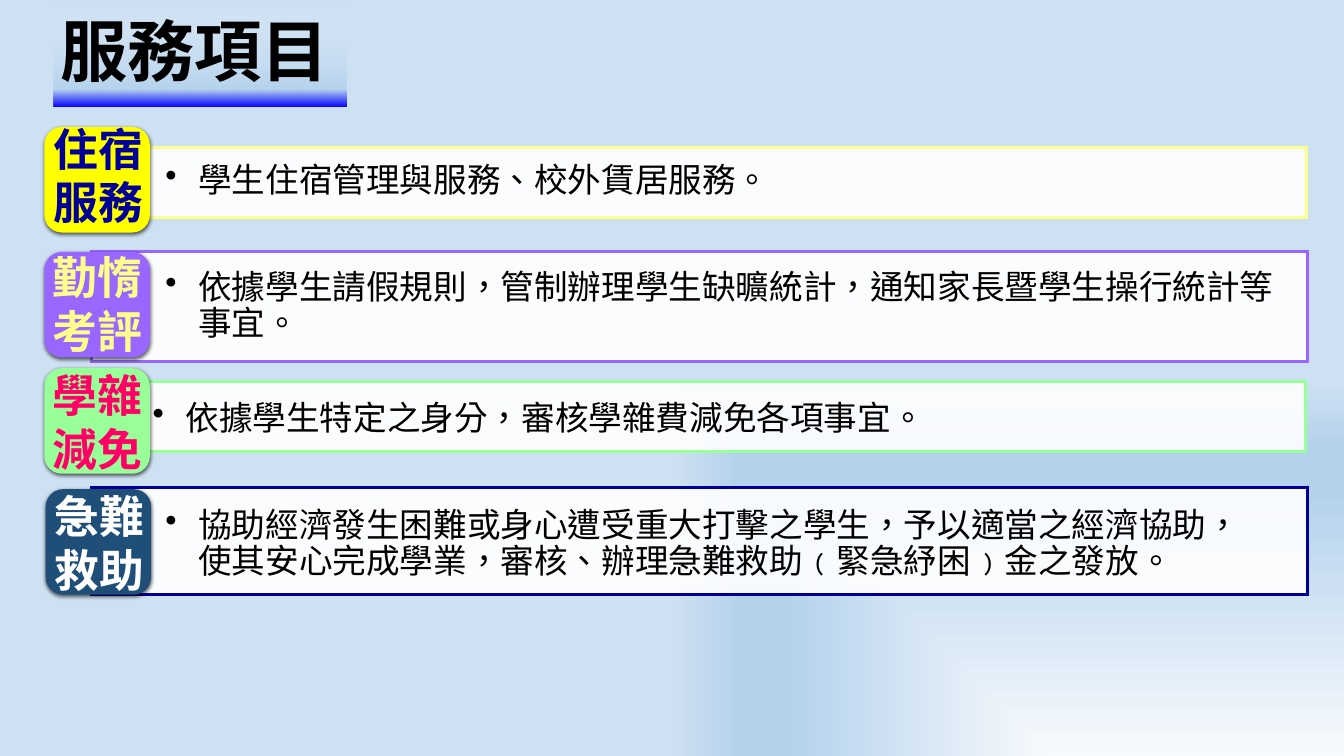
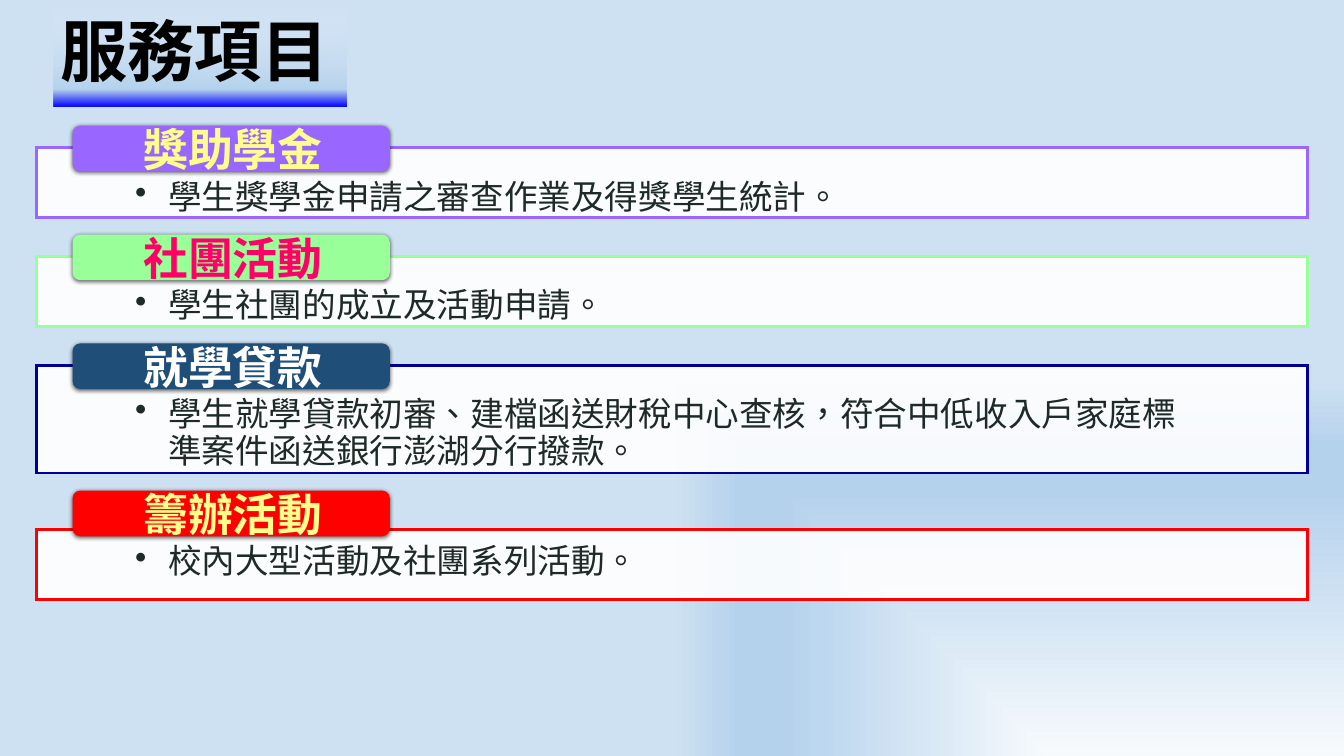
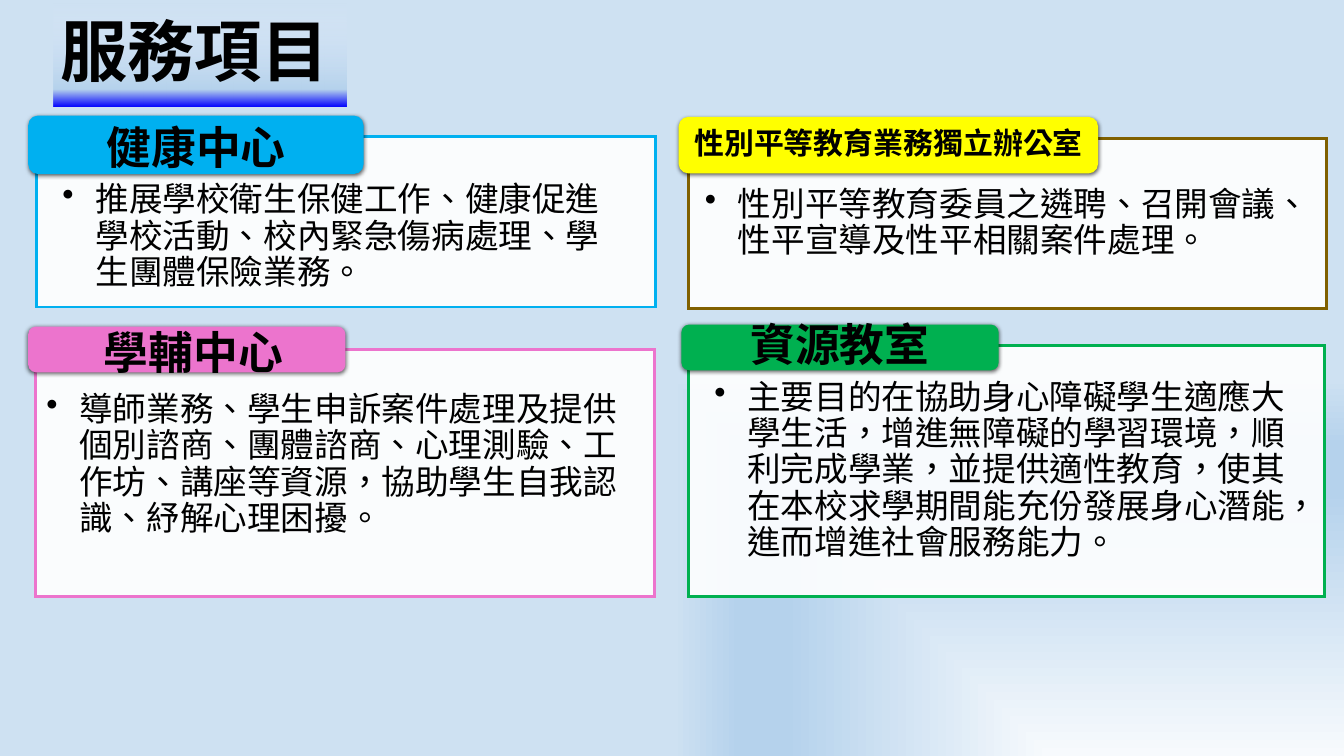
from dataclasses import dataclass
from typing import NamedTuple

from lxml.etree import SubElement
from pptx import Presentation
from pptx.dml.color import RGBColor
from pptx.enum.shapes import MSO_SHAPE
from pptx.enum.text import MSO_ANCHOR, PP_ALIGN
from pptx.oxml import parse_xml
from pptx.oxml.ns import nsdecls, qn
from pptx.util import Inches, Pt

SANS = "Noto Sans CJK SC"
SERIF = "Times New Roman"
BLACK, WHITE, INK = "000000", "FFFFFF", "1E2A26"
VIOLET, MINT, NAVY, STEEL = "9966FF", "99FF99", "000099", "1F4E79"
YELLOW, CREAM, PINK, RED = "FFFF00", "FFFD8B", "FF0066", "FF0000"
HANG = 0.49
BODY_SPACING, CAPTION_SPACING, TITLE_SPACING = 0.9, 1.0, 0.9


class Box(NamedTuple):
    """Left, top, width and height in inches."""

    left: float
    top: float
    width: float
    height: float


class Margins(NamedTuple):
    """Left, top, right and bottom insets in inches."""

    left: float = 0
    top: float = 0
    right: float = 0
    bottom: float = 0


class Stop(NamedTuple):
    """Gradient stop: position and opacity in percent."""

    position: int
    color: str
    opacity: int = 100


@dataclass(frozen=True)
class Service:
    """One service: a framed description with a coloured tag."""

    caption: str
    description: str
    panel: Box
    body: Box
    tag: Box
    caption_box: Box
    border: str
    tag_color: str
    caption_color: str = BLACK
    font: str = SANS
    serif_ending: str = ""
    text_color: str = BLACK
    caption_size: int = 48


BACKDROP = (Stop(0, "F7FAFD"), Stop(70, "B5D2EC"), Stop(82, "B5D2EC"), Stop(100, "CEE1F2"))
TITLE_FADE = (Stop(0, "0000FF"), Stop(17, "B5D2EC"), Stop(100, "E1EBFB", 0))
CORNER = '<a:path path="rect"><a:fillToRect l="100000" t="100000"/></a:path>'
UPWARD = '<a:lin ang="16200000" scaled="0"/>'


def rgb(color: str) -> RGBColor:
    """Turn a hex string into a colour."""
    return RGBColor.from_string(color)


def apply_gradient(fill, root, stops: tuple[Stop, ...], direction: str) -> None:
    """Give a fill the stops and direction of a gradient."""
    fill.gradient()
    placeholder = next(root.iter(qn("a:gradFill")))
    listed = "".join(
        f'<a:gs pos="{stop.position * 1000}"><a:srgbClr val="{stop.color}">'
        f'<a:alpha val="{stop.opacity * 1000}"/></a:srgbClr></a:gs>'
        for stop in stops
    )
    gradient = parse_xml(
        f'<a:gradFill {nsdecls("a")} rotWithShape="1"><a:gsLst>{listed}</a:gsLst>{direction}</a:gradFill>'
    )
    placeholder.getparent().replace(placeholder, gradient)


def add_block(slide, preset: MSO_SHAPE, box: Box):
    """Add a preset shape without outline or shadow."""
    block = slide.shapes.add_shape(preset, *map(Inches, box))
    block.shadow.inherit = False
    block.line.fill.background()
    return block


def add_panel(slide, box: Box, border: str) -> None:
    """Draw the translucent white frame of a service."""
    panel = add_block(slide, MSO_SHAPE.RECTANGLE, box)
    panel.fill.solid()
    panel.fill.fore_color.rgb = rgb(WHITE)
    tint = next(panel.element.spPr.iter(qn("a:srgbClr")))
    SubElement(tint, qn("a:alpha"), val="90000")
    panel.line.color.rgb = rgb(border)
    panel.line.width = Pt(3)
    SubElement(panel.element.spPr.find(qn("a:ln")), qn("a:miter"), lim="800000")


def add_tag(slide, box: Box, color: str) -> None:
    """Draw the rounded tag with its soft shadow."""
    tag = add_block(slide, MSO_SHAPE.ROUNDED_RECTANGLE, box)
    tag.fill.solid()
    tag.fill.fore_color.rgb = rgb(color)
    tag.element.spPr.find(qn("a:effectLst")).append(
        parse_xml(
            f'<a:outerShdw {nsdecls("a")} blurRad="57150" dist="19050" dir="5400000" algn="ctr" '
            'rotWithShape="0"><a:srgbClr val="000000"><a:alpha val="63000"/></a:srgbClr></a:outerShdw>'
        )
    )


def style(paragraph, font: str, size: int, color: str, bold: bool, spacing: float) -> None:
    """Set the character format and line spacing of a paragraph."""
    paragraph.line_spacing = spacing
    paragraph.font.name = font
    paragraph.font.size = Pt(size)
    paragraph.font.bold = bold
    paragraph.font.color.rgb = rgb(color)
    defaults = next(paragraph._p.iter(qn("a:defRPr")))
    defaults.set("lang", "zh-TW")
    defaults.find(qn("a:latin")).addnext(parse_xml(f'<a:ea {nsdecls("a")} typeface="{SANS}"/>'))


def add_text_box(slide, box: Box, margins: Margins, anchor: MSO_ANCHOR):
    """Add a wrapping text box and return its first paragraph."""
    frame = slide.shapes.add_textbox(*map(Inches, box)).text_frame
    frame.word_wrap = True
    frame.vertical_anchor = anchor
    frame.margin_left, frame.margin_top, frame.margin_right, frame.margin_bottom = map(Inches, margins)
    return frame.paragraphs[0]


def add_description(slide, service: Service, margins: Margins) -> None:
    """Write the bulleted description of a service."""
    paragraph = add_text_box(slide, service.body, margins, MSO_ANCHOR.TOP)
    paragraph.add_run().text = service.description
    if service.serif_ending:
        ending = paragraph.add_run()
        ending.text = service.serif_ending
        ending.font.name = SERIF
    paragraph.level = 1
    properties = paragraph._p.get_or_add_pPr()
    properties.set("marL", str(Inches(HANG)))
    properties.set("indent", str(-Inches(HANG)))
    SubElement(properties, qn("a:buChar"), char="•")
    style(paragraph, service.font, 36, service.text_color, False, BODY_SPACING)


def add_caption(slide, service: Service, margins: Margins) -> None:
    """Write the centred name of a service over its tag."""
    paragraph = add_text_box(slide, service.caption_box, margins, MSO_ANCHOR.MIDDLE)
    paragraph.text = service.caption
    paragraph.alignment = PP_ALIGN.CENTER
    style(paragraph, SANS, service.caption_size, service.caption_color, True, CAPTION_SPACING)


def add_title(slide) -> None:
    """Draw the title over its fading band."""
    band = add_block(slide, MSO_SHAPE.RECTANGLE, Box(0.8, 0.05, 4.36, 1.54))
    apply_gradient(band.fill, band.element.spPr, TITLE_FADE, UPWARD)
    band.text_frame.vertical_anchor = MSO_ANCHOR.MIDDLE
    paragraph = band.text_frame.paragraphs[0]
    paragraph.text = "服務項目"
    paragraph.alignment = PP_ALIGN.LEFT
    style(paragraph, SANS, 72, BLACK, True, TITLE_SPACING)


def add_service_slide(
    presentation, services: tuple[Service, ...], body_margins: Margins, caption_margins: Margins
) -> None:
    """Build one slide of services under the shared title."""
    slide = presentation.slides.add_slide(presentation.slide_layouts[6])
    apply_gradient(slide.background.fill, slide.element, BACKDROP, CORNER)
    for service in services:
        add_panel(slide, service.panel, service.border)
        add_description(slide, service, body_margins)
        add_tag(slide, service.tag, service.tag_color)
        add_caption(slide, service, caption_margins)
    add_title(slide)


def chip(left: float, top: float) -> Box:
    """Place a square tag."""
    return Box(left, top, 1.57, 1.57)


def wide_service(
    caption: str, description: str, top: float, height: float, colors: tuple[str, str, str],
    tag_rise: float = 0.33, body_rise: float = 0,
) -> Service:
    """Place a full-width service whose tag sits on the top edge."""
    border, tag_color, caption_color = colors
    tag_top = top - tag_rise
    return Service(
        caption, description,
        Box(0.54, top, 18.92, height), Box(0.54, top - body_rise, 18.92, height),
        Box(1.08, tag_top, 4.72, 0.68), Box(1.12, tag_top + 0.04, 4.69, 0.61),
        border, tag_color, caption_color, text_color=INK,
    )


STUDENT_LIFE = (
    Service(
        "住宿服務", "學生住宿管理與服務、校外賃居服務。",
        Box(1.36, 2.2, 18.08, 1.04), Box(0.99, 1.95, 18.44, 1.04),
        chip(0.66, 1.89), Box(0.7, 1.92, 1.54, 1.37), CREAM, YELLOW, NAVY, SERIF,
    ),
    Service(
        "勤惰考評", "依據學生請假規則，管制辦理學生缺曠統計，通知家長暨學生操行統計等事宜。",
        Box(1.36, 3.74, 18.1, 1.64), Box(0.99, 3.54, 18.44, 1.64),
        chip(0.66, 3.75), Box(0.55, 3.79, 1.8, 1.45), VIOLET, VIOLET, CREAM, SERIF,
    ),
    Service(
        "學雜減免", "依據學生特定之身分，審核學雜費減免各項事宜。",
        Box(1.08, 5.68, 18.35, 1.04), Box(0.8, 5.49, 18.66, 1.17),
        chip(0.66, 5.48), Box(0.68, 5.62, 1.54, 1.31), MINT, MINT, PINK,
    ),
    Service(
        "急難救助",
        "協助經濟發生困難或身心遭受重大打擊之學生，予以適當之經濟協助，"
        "使其安心完成學業，審核、辦理急難救助﹙緊急紓困﹚金之發放。",
        Box(1.36, 7.25, 18.1, 1.6), Box(0.99, 7.08, 18.28, 1.6),
        chip(0.68, 7.28), Box(0.71, 7.31, 1.54, 1.54), NAVY, STEEL, WHITE, SERIF,
    ),
)

ACTIVITIES = (
    wide_service("獎助學金", "學生獎學金申請之審查作業及得獎學生統計。", 2.2, 1.04, (VIOLET, VIOLET, CREAM)),
    wide_service("社團活動", "學生社團的成立及活動申請。", 3.82, 1.04, (MINT, MINT, PINK)),
    wide_service(
        "就學貸款", "學生就學貸款初審、建檔函送財稅中心查核，符合中低收入戶家庭標準案件函送銀行澎湖分行撥款。",
        5.44, 1.6, (NAVY, STEEL, WHITE),
    ),
    wide_service("籌辦活動", "校內大型活動及社團系列活動。", 7.88, 1.04, (RED, RED, CREAM), 0.58, 0.25),
)

CENTERS = (
    Service(
        "健康中心", "推展學校衛生保健工作、健康促進學校活動、校內緊急傷病處理、學生團體保險業務。",
        Box(0.54, 2.03, 9.21, 2.54), Box(0.54, 2.24, 8.96, 2.22),
        Box(0.42, 1.72, 4.99, 0.87), Box(0.46, 1.79, 4.92, 0.79), "00B0F0", "00B0F0", font=SERIF,
    ),
    Service(
        "學輔中心", "導師業務、學生申訴案件處理及提供個別諮商、團體諮商、心理測驗、工作坊、講座等資源，",
        Box(0.53, 5.2, 9.21, 3.68), Box(0.3, 5.36, 9.44, 3.76),
        Box(0.42, 4.86, 4.72, 0.68), Box(0.55, 4.93, 4.66, 0.61), "EC74CD", "EC74CD",
        serif_ending="協助學生自我認識、紓解心理困擾。",
    ),
    Service(
        "資源教室",
        "主要目的在協助身心障礙學生適應大學生活，增進無障礙的學習環境，順利完成學業，"
        "並提供適性教育，使其在本校求學期間能充份發展身心潛能，進而增進社會服務能力。",
        Box(10.24, 5.14, 9.47, 3.74), Box(10.24, 5.18, 9.46, 3.42),
        Box(10.14, 4.83, 4.72, 0.68), Box(10.17, 4.81, 4.66, 0.61), "00B050", "00B050", font=SERIF,
    ),
    Service(
        "性別平等教育業務獨立辦公室", "性別平等教育委員之遴聘、召開會議、性平宣導及性平相關案件處理。",
        Box(10.24, 2.06, 9.5, 2.53), Box(10.1, 2.31, 9.6, 1.8),
        Box(10.1, 1.74, 6.24, 0.84), Box(9.75, 1.81, 6.95, 0.61), "806000", YELLOW, caption_size=32,
    ),
)


def main() -> None:
    """Build and save the presentation."""
    presentation = Presentation()
    presentation.slide_width, presentation.slide_height = Inches(20), Inches(11.25)
    add_service_slide(presentation, STUDENT_LIFE, Margins(1.47, 0.48, 0.39), Margins())
    add_service_slide(presentation, ACTIVITIES, Margins(1.47, 0.48, 1.47), Margins())
    add_service_slide(presentation, CENTERS, Margins(0.39, 0.48, 0.39), Margins(0.5, 0, 0.5))
    presentation.save("out.pptx")


if __name__ == "__main__":
    main()
